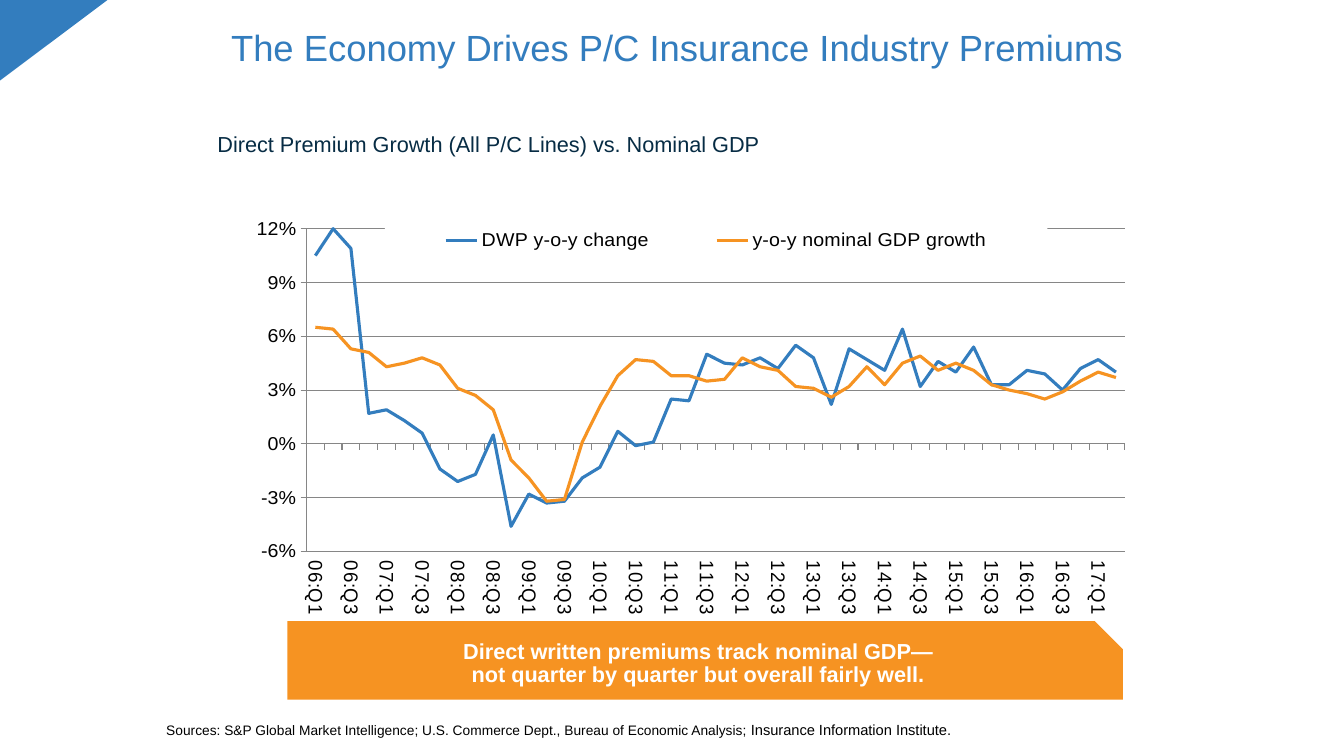
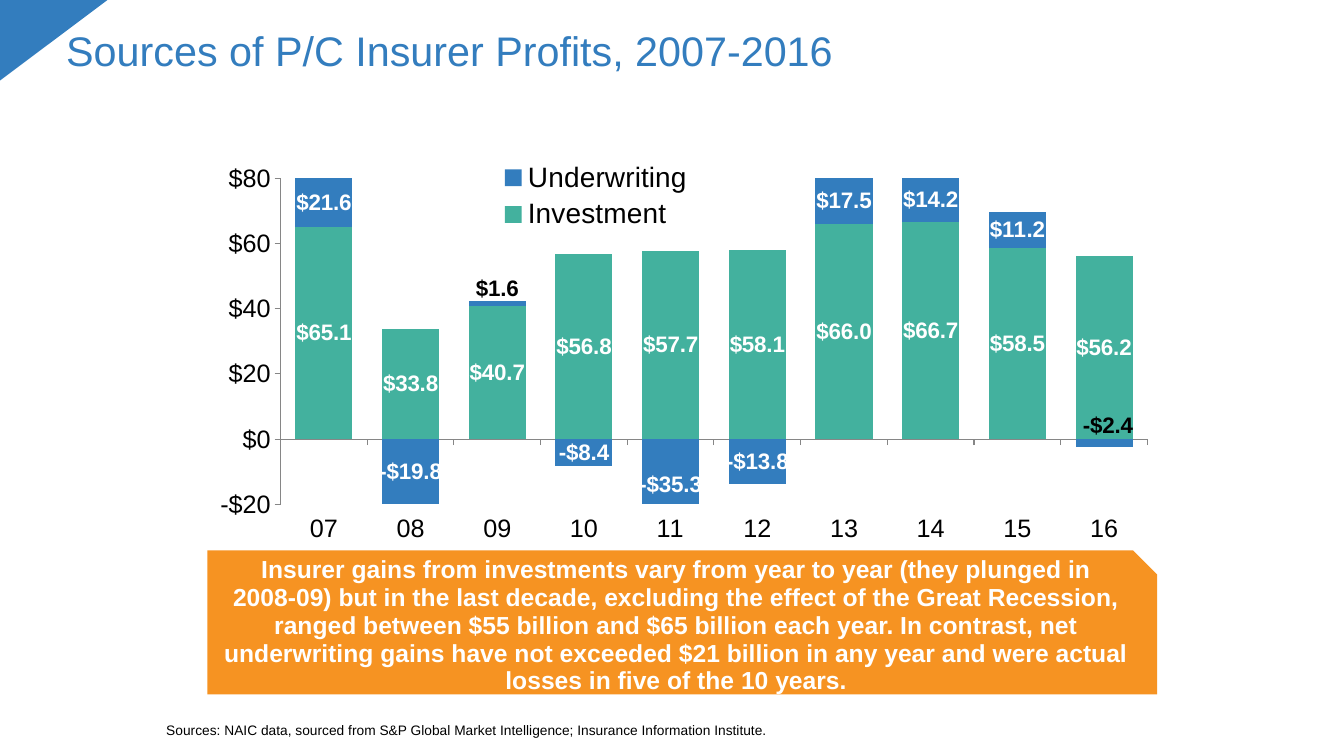
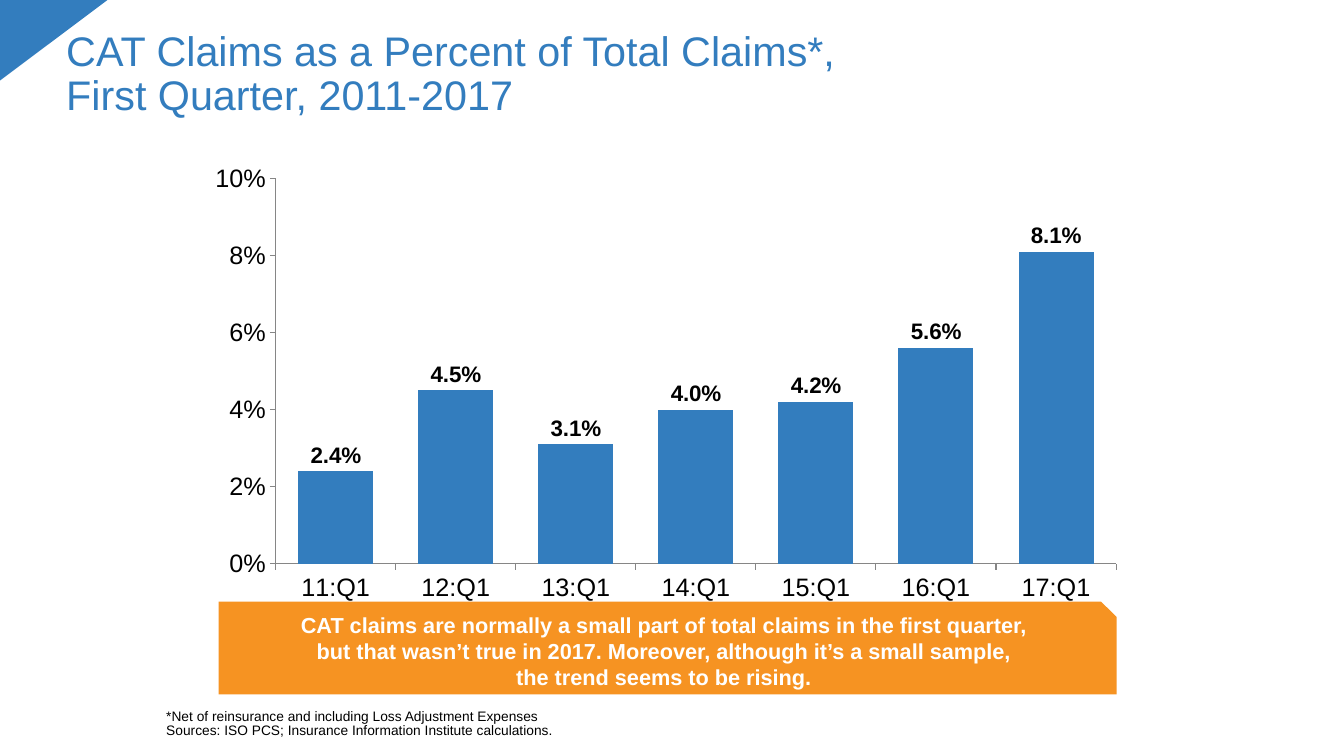
from lxml import etree
from pptx import Presentation
from pptx import util as u
from pptx.chart.data import CategoryChartData
from pptx.dml.color import RGBColor
from pptx.enum import chart as ch, shapes, text

BLUE = RGBColor(0x33, 0x7D, 0xBE)
ORANGE = RGBColor(0xF6, 0x93, 0x22)
GREEN = RGBColor(0x43, 0xB1, 0x9E)
NAVY = RGBColor(0x07, 0x2C, 0x44)
GREY = RGBColor(0x86, 0x86, 0x86)
BLACK = RGBColor(0, 0, 0)
WHITE = RGBColor(255, 255, 255)
FONT = "Arial"
CNS = "http://schemas.openxmlformats.org/drawingml/2006/chart"
KIND, MARK = ch.XL_CHART_TYPE, ch.XL_TICK_MARK
LEFT, MID = text.PP_ALIGN.LEFT, text.PP_ALIGN.CENTER
TOP, CENTRE, LOW = (text.MSO_ANCHOR.TOP, text.MSO_ANCHOR.MIDDLE,
                    text.MSO_ANCHOR.BOTTOM)

# Shared places, in cm: left, top, width, height
TITLE = (1.42, 0.64, 31.32, 2.64)
SUB = (5.23, 3.25, 23.5, 1.09)
NOTE = (4.19, 17.48, 28.45, 1.14)
CORNER = (0.34, -0.34, 2.03, 2.71)
PAD = (0.25, 0.13, 0.25, 0.13)

# Content
QUARTERS = [f"{y:02}:Q{q}" for y in range(6, 18) for q in range(1, 5)][:46]
DWP = [10.5, 12, 10.9, 1.7, 1.9, 1.3, 0.6, -1.4, -2.1, -1.7, 0.5, -4.6,
       -2.8, -3.3, -3.2, -1.9, -1.3, 0.7, -0.1, 0.1, 2.5, 2.4, 5, 4.5,
       4.4, 4.8, 4.2, 5.5, 4.8, 2.2, 5.3, 4.7, 4.1, 6.4, 3.2, 4.6,
       4, 5.4, 3.3, 3.3, 4.1, 3.9, 3, 4.2, 4.7, 4]
GDP = [6.5, 6.4, 5.3, 5.1, 4.3, 4.5, 4.8, 4.4, 3.1, 2.7, 1.9, -0.9,
       -1.9, -3.2, -3.1, 0.1, 2.1, 3.8, 4.7, 4.6, 3.8, 3.8, 3.5, 3.6,
       4.8, 4.3, 4.1, 3.2, 3.1, 2.6, 3.2, 4.3, 3.3, 4.5, 4.9, 4.1,
       4.5, 4.1, 3.3, 3, 2.8, 2.5, 2.9, 3.5, 4, 3.7]
INVEST = [65.1, 33.8, 40.7, 56.8, 57.7, 58.1, 66, 66.7, 58.5, 56.2]
UNDER = [21.6, -19.8, 1.6, -8.4, -35.3, -13.8, 17.5, 14.2, 11.2, -2.4]
CAT = [2.4, 4.5, 3.1, 4, 4.2, 5.6, 8.1]


def share(vals):
    return [round(v / 100, 3) for v in vals]


SLIDES = [
    dict(title=["The Economy Drives P/C Insurance Industry Premiums"],
         size=26, align=MID,
         sub="Direct Premium Growth (All P/C Lines) vs. Nominal GDP",
         note=[[("Sources: S&P Global Market Intelligence; U.S. Commerce "
                 "Dept., Bureau of Economic Analysis; ", 9.8),
                ("Insurance Information Institute.", 10.5)]],
         call=dict(at=(7.24, 15.65, 21.06, 1.98), adj=0.361, size=15.5,
                   lead=0.9, anchor=TOP, pad=(0.18, 0.13, 0.18, 0.13),
                   lines=["Direct written premiums track nominal GDP—",
                          "not quarter by quarter but overall fairly well."]),
         chart=dict(kind=KIND.LINE, at=(5.23, 5.23, 23.52, 10.21),
                    plot=(0.106, 0.055, 0.877, 0.837), cats=QUARTERS,
                    sers=[("DWP y-o-y change", share(DWP), BLUE),
                          ("y-o-y nominal GDP growth", share(GDP), ORANGE)],
                    scale=(-0.06, 0.12, 0.03), fmt="0%", size=14,
                    grid=True, turn=True,
                    key=dict(pos=ch.XL_LEGEND_POSITION.TOP, size=14,
                             box=(0.19, 0.04, 0.71, 0.09)))),
    dict(title=["Sources of P/C Insurer Profits, 2007-2016"],
         note=[[("Sources: NAIC data, sourced from S&P Global Market "
                 "Intelligence; Insurance Information Institute.", 9.8)]],
         call=dict(at=(5.23, 13.87, 23.93, 3.63), size=17.6, lead=0.94,
                   anchor=CENTRE, pad=(0.25, 0.13, 0.25, 0.25),
                   lines=["Insurer gains from investments vary from year to "
                          "year (they plunged in",
                          "2008-09) but in the last decade, excluding the "
                          "effect of the Great Recession, ranged between $55 "
                          "billion and $65 billion each year. In contrast, "
                          "net underwriting gains have not exceeded $21 "
                          "billion in any year and were actual losses in "
                          "five of the 10 years."]),
         chart=dict(kind=KIND.COLUMN_STACKED, at=(4.78, 3.73, 24.38, 11.02),
                    plot=(0.094, 0.069, 0.896, 0.746),
                    cats=[f"{y:02}" for y in range(7, 17)],
                    sers=[("Investment", INVEST, GREEN),
                          ("Underwriting", UNDER, BLUE)],
                    scale=(-20, 80, 20), fmt='"$"#,##0', size=18,
                    gap=52, lap=100, label=('"$"#,##0.0', WHITE, None),
                    # series, point, shift right, shift down, colour
                    moved=[(1, 2, 0, -0.034, BLACK), (1, 4, 0, 0.03, WHITE),
                           (1, 9, 0.004, -0.039, BLACK)],
                    key=dict(pos=ch.XL_LEGEND_POSITION.RIGHT, size=20,
                             box=(0.32, 0.02, 0.2, 0.18)))),
    dict(title=["CAT Claims as a Percent of Total Claims*,",
                "First Quarter, 2011-2017"],
         note=[[("*Net of reinsurance and including Loss Adjustment Expenses",
                 9.8)],
               [("Sources: ISO PCS; Insurance Information Institute "
                 "calculations.", 9.8)]],
         call=dict(at=(5.51, 15.16, 22.63, 2.34), size=15.5, lead=1,
                   anchor=CENTRE, pad=(0.33, 0.18, 0.33, 0.25),
                   lines=["CAT claims are normally a small part of total "
                          "claims in the first quarter,",
                          "but that wasn’t true in 2017. Moreover, although "
                          "it’s a small sample,",
                          "the trend seems to be rising."]),
         chart=dict(kind=KIND.COLUMN_CLUSTERED, at=(5.33, 3.66, 22.81, 12.5),
                    plot=(0.073, 0.067, 0.929, 0.777),
                    cats=[f"{y}:Q1" for y in range(11, 18)],
                    sers=[("Series 1", share(CAT), BLUE)],
                    scale=(0, 0.1, 0.02), fmt="0%", size=18, gap=60,
                    label=("0.0%", BLACK,
                           ch.XL_LABEL_POSITION.OUTSIDE_END))),
]


def put(obj, **vals):
    for name, val in vals.items():
        setattr(obj, name, val)


def style(font, size, color, bold=False):
    put(font, name=FONT, size=u.Pt(size), bold=bold)
    font.color.rgb = color


def cms(box):
    return [u.Cm(v) for v in box]


def node(tag, **attrs):
    return etree.Element(f"{{{CNS}}}{tag}", attrs)


# Text: each row is a list of (words, size) runs
def write(frame, rows, color, bold=False, align=LEFT, lead=0.9,
          anchor=TOP, pad=PAD):
    sides = ("margin_left", "margin_top", "margin_right", "margin_bottom")
    put(frame, word_wrap=True, vertical_anchor=anchor,
        **dict(zip(sides, cms(pad))))
    for i, row in enumerate(rows):
        para = frame.add_paragraph() if i else frame.paragraphs[0]
        put(para, alignment=align, line_spacing=lead)
        for words, size in row:
            run = para.add_run()
            run.text = words
            style(run.font, size, color, bold)


def box(slide, at, rows, color, **opts):
    write(slide.shapes.add_textbox(*cms(at)).text_frame, rows, color, **opts)


def shape(slide, kind, at, fill):
    shp = slide.shapes.add_shape(kind, *cms(at))
    shp.shadow.inherit = False
    shp.fill.solid()
    shp.fill.fore_color.rgb = fill
    shp.line.fill.background()
    return shp


# Chart layout given as fractions of the chart
def layout(vals, inner=False, edge=True):
    top = node("layout")
    man = etree.SubElement(top, f"{{{CNS}}}manualLayout")
    if inner:
        man.append(node("layoutTarget", val="inner"))
    if edge:
        man.extend([node("xMode", val="edge"), node("yMode", val="edge")])
    man.extend([node(tag, val=str(v)) for tag, v in zip("xywh", vals)])
    return top


def legend(chart, key):
    chart.has_legend = True
    leg = chart.legend
    put(leg, position=key["pos"], include_in_layout=False)
    style(leg.font, key["size"], BLACK)
    over = leg._element.find(f"{{{CNS}}}overlay")
    over.addprevious(layout(key["box"]))
    over.addnext(etree.fromstring(
        f'<c:spPr xmlns:c="{CNS}" xmlns:a="http://schemas.openxmlformats.org/'
        'drawingml/2006/main"><a:solidFill><a:srgbClr val="FFFFFF"/>'
        '</a:solidFill><a:ln><a:noFill/></a:ln></c:spPr>'))


def axes(chart, info):
    cat, val = chart.category_axis, chart.value_axis
    for axis in (cat, val):
        put(axis, major_tick_mark=MARK.OUTSIDE, minor_tick_mark=MARK.NONE,
            has_major_gridlines=False)
        style(axis.tick_labels.font, info["size"], BLACK)
        put(axis.format.line, width=u.Pt(0.75))
        axis.format.line.color.rgb = GREY
    cat.tick_label_position = ch.XL_TICK_LABEL_POSITION.LOW
    low, high, step = info["scale"]
    put(val, minimum_scale=low, maximum_scale=high, major_unit=step)
    put(val.tick_labels, number_format=info["fmt"],
        number_format_is_linked=False)
    if info.get("grid"):
        val.has_major_gridlines = True
        line = val.major_gridlines.format.line
        line.width = u.Pt(0.75)
        line.color.rgb = GREY
    if info.get("turn"):
        cat._element.txPr.bodyPr.set("rot", "5400000")
        cat._element.find(f"{{{CNS}}}noMultiLvlLbl").addprevious(
            node("tickLblSkip", val="2"))


def labels(ser, fmt, color, pos):
    labs = ser.data_labels
    put(labs, show_value=True, number_format=fmt,
        number_format_is_linked=False)
    if pos is not None:
        labs.position = pos
    style(labs.font, 16, color, True)


def graph(slide, info):
    data = CategoryChartData(number_format=info["fmt"])
    data.categories = info["cats"]
    for name, vals, _ in info["sers"]:
        data.add_series(name, vals)
    chart = slide.shapes.add_chart(info["kind"], *cms(info["at"]), data).chart
    put(chart, has_title=False, has_legend=False)
    style(chart.font, info["size"], BLACK)
    area = chart._chartSpace.chart.plotArea
    for old in area.findall(f"{{{CNS}}}layout"):
        area.remove(old)
    area.insert(0, layout(info["plot"], inner=True))
    axes(chart, info)
    plot = chart.plots[0]
    plot.vary_by_categories = False
    if "gap" in info:
        put(plot, gap_width=info["gap"], overlap=info.get("lap", 0))
    for ser, (_, _, color) in zip(plot.series, info["sers"]):
        if info["kind"] == KIND.LINE:
            ser.smooth = False
            ser.format.line.width = u.Pt(2.25)
            ser.format.line.color.rgb = color
        else:
            ser.invert_if_negative = False
            ser.format.fill.solid()
            ser.format.fill.fore_color.rgb = color
        if "label" in info:
            labels(ser, *info["label"])
    for which, idx, right, down, color in info.get("moved", []):
        ser = plot.series[which]
        style(ser.points[idx].data_label.font, 16, color, True)
        lab = ser.data_labels._element.xpath(
            f"c:dLbl[c:idx/@val='{idx}']")[0]
        lab.insert(1, layout((right, down), edge=False))
        lab.insert(2, node("numFmt", formatCode=info["label"][0],
                           sourceLinked="0"))
    if "key" in info:
        legend(chart, info["key"])


def callout(slide, info):
    shp = shape(slide, shapes.MSO_SHAPE.SNIP_1_RECTANGLE, info["at"], ORANGE)
    if "adj" in info:
        shp.adjustments[0] = info["adj"]
    write(shp.text_frame, [[(s, info["size"])] for s in info["lines"]], WHITE,
          bold=True, align=MID, lead=info["lead"], anchor=info["anchor"],
          pad=info["pad"])


def main():
    prs = Presentation()
    put(prs, slide_width=u.Cm(33.87), slide_height=u.Cm(19.05))
    for info in SLIDES:
        slide = prs.slides.add_slide(prs.slide_layouts[6])
        corner = shape(slide, shapes.MSO_SHAPE.RIGHT_TRIANGLE, CORNER, BLUE)
        corner.rotation = 90
        size = info.get("size", 29.5)
        box(slide, TITLE, [[(s, size)] for s in info["title"]], BLUE,
            align=info.get("align", LEFT))
        if "sub" in info:
            box(slide, SUB, [[(info["sub"], 15.5)]], NAVY)
        box(slide, NOTE, info["note"], BLACK, anchor=LOW, pad=(0, 0, 0, 0))
        graph(slide, info["chart"])
        callout(slide, info["call"])
    prs.save("out.pptx")


if __name__ == "__main__":
    main()
